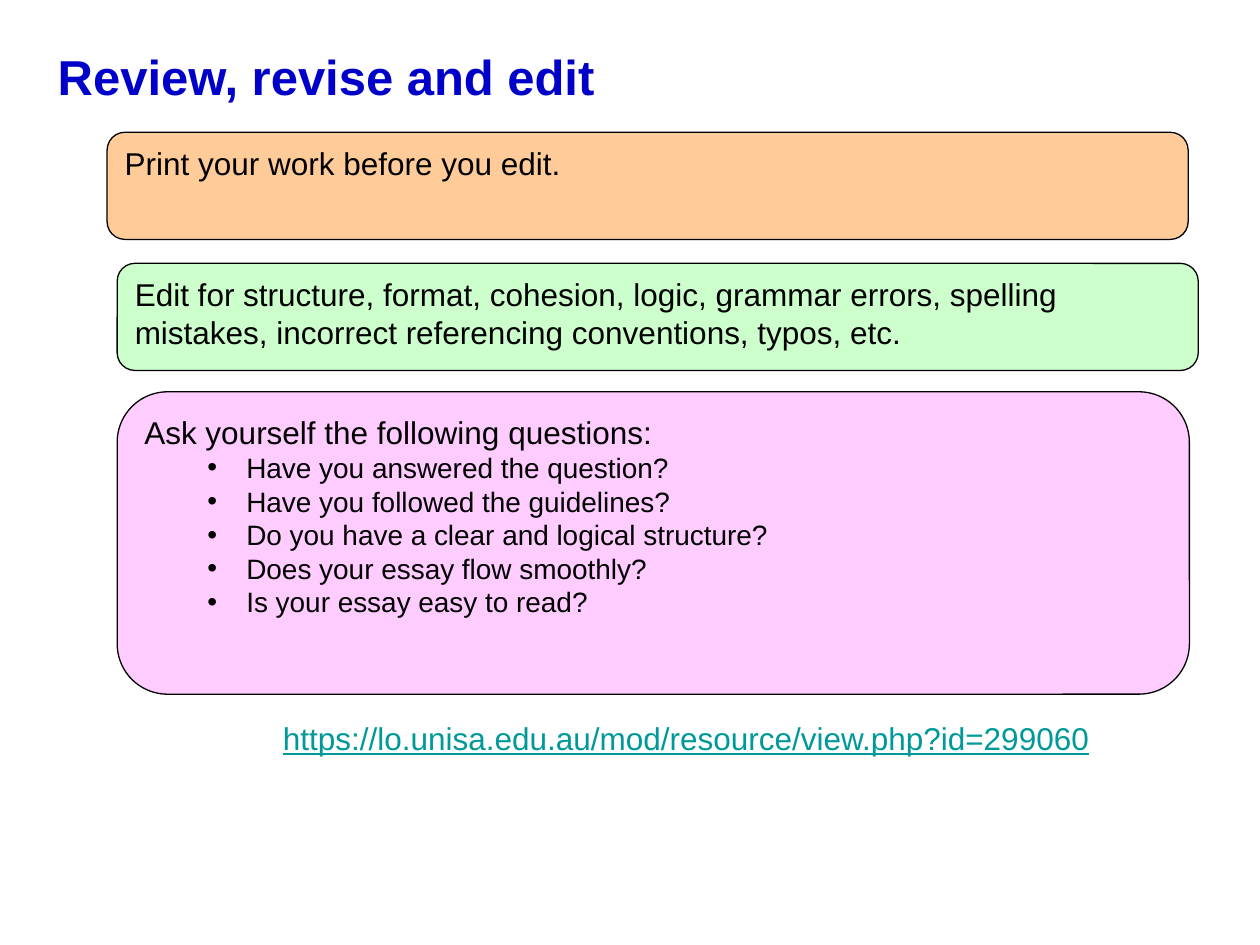
from pptx import Presentation
from pptx import util as u
from pptx.dml.color import RGBColor
from pptx.enum import shapes, text
from lxml import etree

COLS, ROWS = 100, 75
A = "{http://schemas.openxmlformats.org/drawingml/2006/main}"


def rgb(value):
    return RGBColor.from_string(value)


class Deck:
    font, ink, body, small = "Arial", "000000", 18, 16

    def __init__(self):
        self.prs = Presentation()
        self.prs.slide_width, self.prs.slide_height = u.Inches(10), u.Inches(7.5)
        self.s = self.prs.slides.add_slide(self.prs.slide_layouts[6])

    def area(self, col, row, cols, rows):
        dx, dy = self.prs.slide_width / COLS, self.prs.slide_height / ROWS
        return [round(n) for n in (col * dx, row * dy, cols * dx, rows * dy)]

    def style(self, p, size, color=None, bold=False, underline=False):
        f = p.font
        f.name, f.size, f.bold, f.underline = self.font, u.Pt(size), bold, underline
        f.color.rgb = rgb(color or self.ink)

    def label(self, words, grid, size, color, align=text.PP_ALIGN.LEFT, **look):
        tf = self.s.shapes.add_textbox(*self.area(*grid)).text_frame
        tf.word_wrap = True
        p = tf.paragraphs[0]
        p.text, p.alignment = words, align
        self.style(p, size, color, **look)

    def card(self, words, grid, fill, bullets=()):
        sp = self.s.shapes.add_shape(shapes.MSO_SHAPE.ROUNDED_RECTANGLE, *self.area(*grid))
        sp.shadow.inherit = False
        sp.fill.solid()
        sp.fill.fore_color.rgb = rgb(fill)
        sp.line.color.rgb = rgb(self.ink)
        sp.line.width = u.Pt(0.75)
        tf = sp.text_frame
        tf.word_wrap = True
        tf.vertical_anchor = text.MSO_ANCHOR.TOP
        p = tf.paragraphs[0]
        p.text, p.alignment = words, text.PP_ALIGN.LEFT
        self.style(p, self.body)
        for item in bullets:
            self.bullet(tf.add_paragraph(), item)

    def bullet(self, p, words):
        p.text, p.level, p.alignment = words, 1, text.PP_ALIGN.LEFT
        pr = p._p.get_or_add_pPr()
        pr.set("marL", str(u.Inches(0.81)))
        pr.set("indent", str(u.Inches(-0.31)))
        etree.SubElement(pr, A + "buFont", typeface=self.font)
        etree.SubElement(pr, A + "buChar", char="•")
        self.style(p, self.small)


def main():
    deck = Deck()
    deck.label("Review, revise and edit", (3.6, 3.2, 94.1, 7), 28, "0000C8", bold=True)
    deck.card("Print your work before you edit.", (8.5, 10.5, 85.8, 8.5), "FFCC99")
    deck.card("Edit for structure, format, cohesion, logic, grammar errors, spelling "
              "mistakes, incorrect referencing conventions, typos, etc.",
              (9.3, 20.9, 85.8, 8.5), "CCFFCC")
    deck.card("Ask yourself the following questions:", (9.3, 31.1, 85.1, 24), "FFCCFF", [
        "Have you answered the question?",
        "Have you followed the guidelines?",
        "Do you have a clear and logical structure?",
        "Does your essay flow smoothly?",
        "Is your essay easy to read?",
    ])
    deck.label("https://lo.unisa.edu.au/mod/resource/view.php?id=299060",
               (10.7, 56.6, 87.5, 4), deck.body, "009999",
               text.PP_ALIGN.CENTER, underline=True)
    deck.prs.save("out.pptx")


if __name__ == "__main__":
    main()
